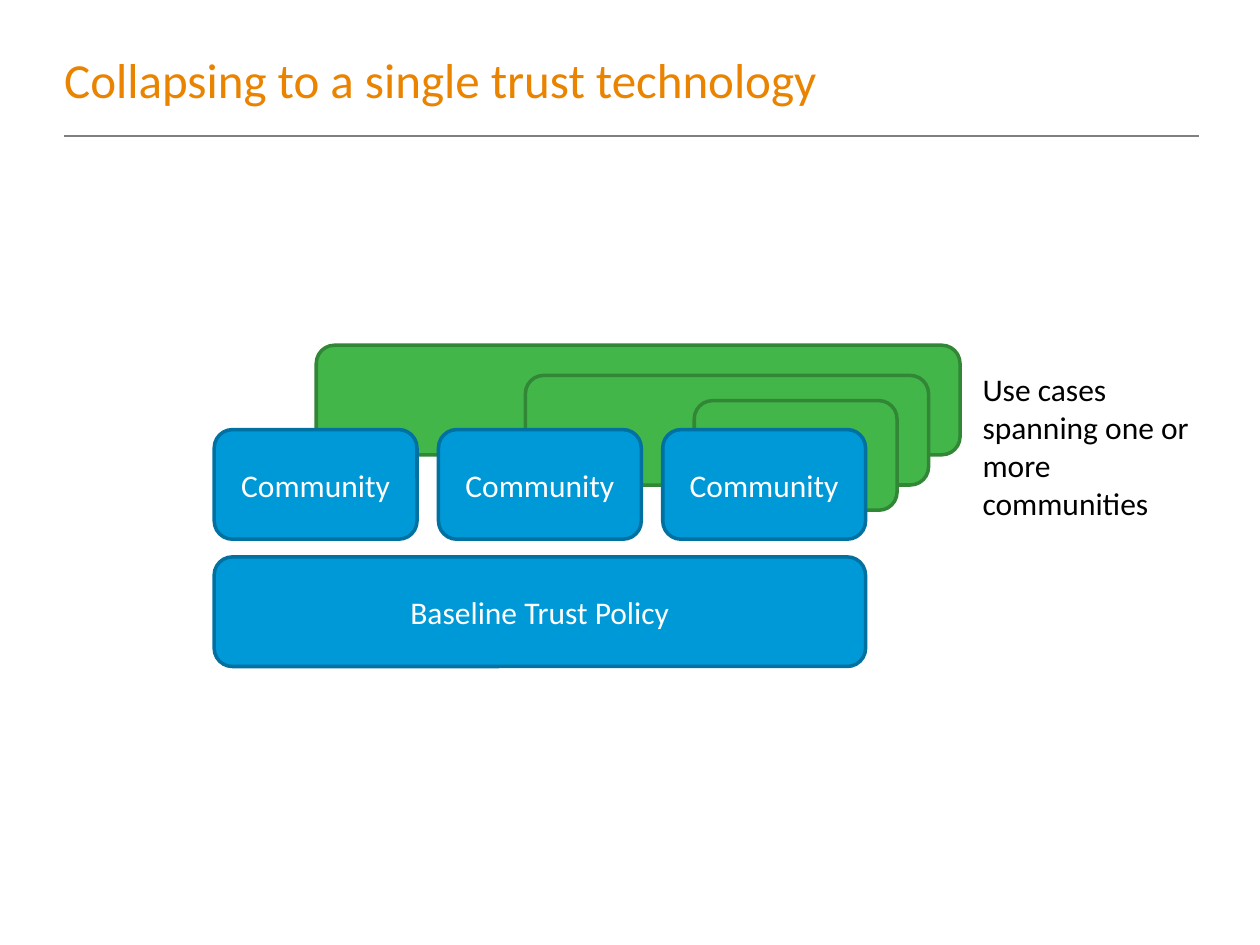
from pptx import Presentation
from pptx.dml.color import RGBColor
from pptx.enum.shapes import MSO_CONNECTOR, MSO_SHAPE
from pptx.enum.text import MSO_ANCHOR, MSO_AUTO_SIZE, PP_ALIGN
from pptx.oxml.ns import qn
from pptx.util import Emu, Pt
from lxml import etree

ROUNDED = MSO_SHAPE.ROUNDED_RECTANGLE
STRAIGHT = MSO_CONNECTOR.STRAIGHT
MIDDLE = MSO_ANCHOR.MIDDLE
GROW = MSO_AUTO_SIZE.SHAPE_TO_FIT_TEXT
LEFT, CENTER = PP_ALIGN.LEFT, PP_ALIGN.CENTER

SCALE = 9144
FONT = "Calibri"
TITLE_ONLY = 5
COLORS = {
    "title": "E98300", "rule": "808080", "text": "000000", "light": "FFFFFF",
    "blue": "0099D8", "blue_edge": "0071A0",
    "green": "43B649", "green_edge": "328736",
}
BLOCK_HEIGHT = 87
COMMUNITY_WIDTH = 161
USE_CASES = [(81, 0, 511), (247, 24, 320), (381, 44, 161)]


def px(length):
    """Convert a length in px to EMU."""
    return Emu(length * SCALE)


def color(name):
    """Return a named colour of the palette."""
    return RGBColor.from_string(COLORS[name])


def write(shape, text, size, color_name, alignment):
    """Put one formatted paragraph in a shape."""
    text_frame = shape.text_frame
    text_frame.text = text
    text_frame.word_wrap = True
    paragraph = text_frame.paragraphs[0]
    paragraph.alignment = alignment
    font = paragraph.runs[0].font
    font.name, font.size = FONT, Pt(size)
    font.color.rgb = color(color_name)


def add_block(slide, box, fill, text=""):
    """Add a rounded block with an edge of a darker shade."""
    shape = slide.shapes.add_shape(ROUNDED, *map(px, box))
    shape.shadow.inherit = False
    shape.fill.solid()
    shape.fill.fore_color.rgb = color(fill)
    shape.line.color.rgb = color(fill + "_edge")
    shape.line.width = Pt(2)
    if text:
        write(shape, text, 18, "light", CENTER)
        shape.text_frame.vertical_anchor = MIDDLE


def add_heading(slide, left, top, width, height):
    """Place the title with a rule along the bottom of the box."""
    title = slide.shapes.title
    title.left, title.top, title.width, title.height = map(px, (left, top, 752, 54))
    write(title, "Collapsing to a single trust technology", 28, "title", LEFT)
    text_frame = title.text_frame
    text_frame.vertical_anchor = MIDDLE
    text_frame.margin_left = text_frame.margin_right = 0
    text_frame.margin_top = text_frame.margin_bottom = 0
    bottom = top + height
    rule = slide.shapes.add_connector(
        STRAIGHT, *map(px, (left, bottom, left + width, bottom)))
    rule.line.color.rgb = color("rule")
    rule.line.width = Pt(1)
    etree.SubElement(rule._element.spPr, qn("a:effectLst"))


def add_trust_diagram(slide, left, top, width, height):
    """Stack use cases behind the communities, above their shared policy."""
    for offset, drop, use_case_width in USE_CASES:
        add_block(slide, (left + offset, top + drop, use_case_width, BLOCK_HEIGHT), "green")
    pitch = (width - COMMUNITY_WIDTH) // 2
    for index in range(3):
        box = (left + index * pitch, top + 67, COMMUNITY_WIDTH, BLOCK_HEIGHT)
        add_block(slide, box, "blue", "Community")
    policy_top = top + height - BLOCK_HEIGHT
    add_block(slide, (left, policy_top, width, BLOCK_HEIGHT), "blue", "Baseline Trust Policy")


def add_caption(slide, left, top, width, height):
    """Explain the use case blocks beside the diagram."""
    caption = slide.shapes.add_textbox(*map(px, (left, top, width, height)))
    write(caption, "Use cases spanning one or more communities", 18, "text", LEFT)
    caption.text_frame.auto_size = GROW


def main():
    """Build and save the slide."""
    presentation = Presentation()
    presentation.slide_width, presentation.slide_height = px(1000), px(750)
    slide = presentation.slides.add_slide(presentation.slide_layouts[TITLE_ONLY])
    add_heading(slide, 51, 36, 901, 72)
    add_trust_diagram(slide, 170, 274, 517, 255)
    add_caption(slide, 770, 289, 197, 131)
    presentation.save("out.pptx")


if __name__ == "__main__":
    main()
